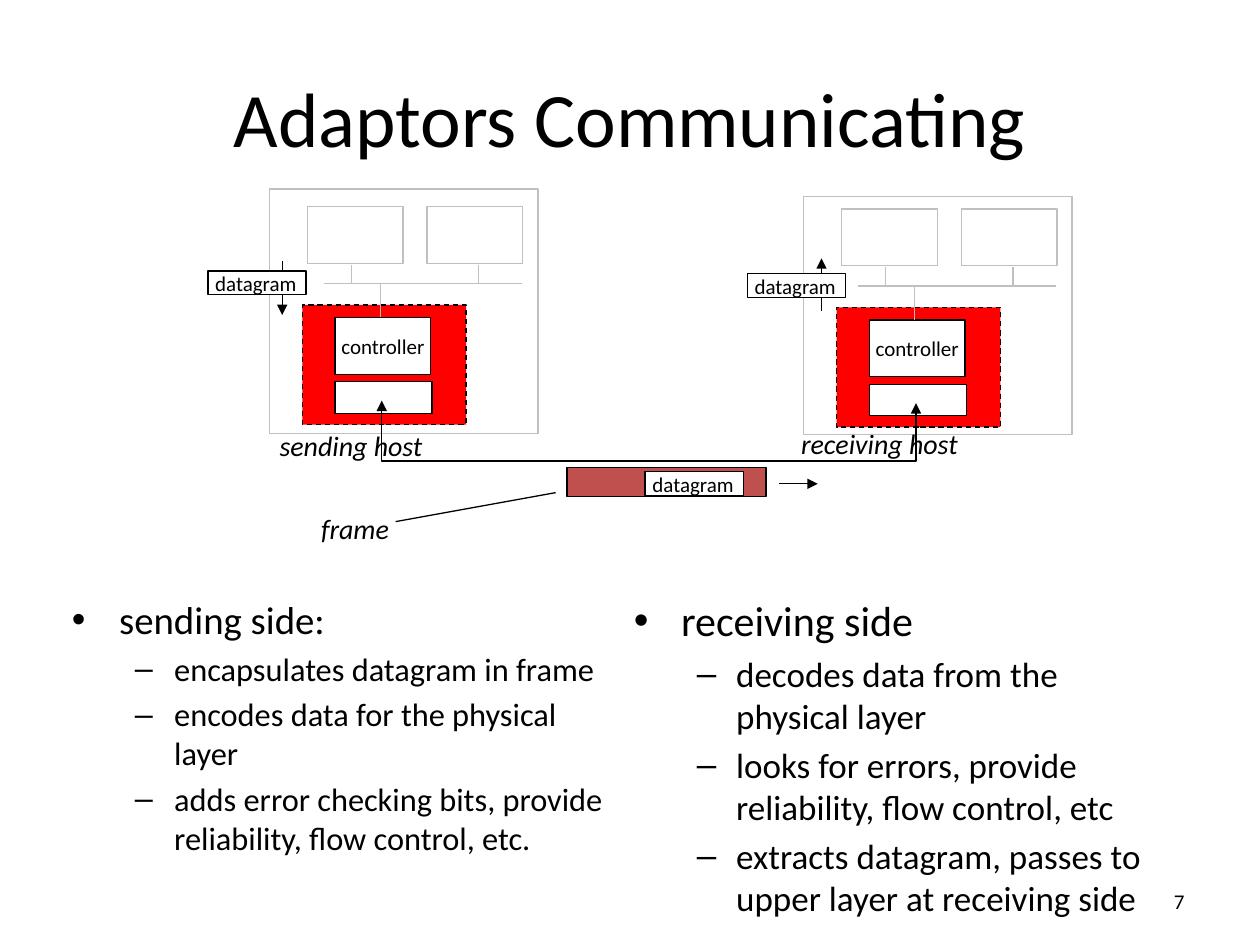
from lxml import etree
from pptx import Presentation
from pptx.dml.color import RGBColor
from pptx.enum.dml import MSO_LINE
from pptx.enum.shapes import MSO_CONNECTOR, MSO_SHAPE
from pptx.enum.text import MSO_ANCHOR, MSO_AUTO_SIZE, PP_ALIGN
from pptx.oxml.ns import qn
from pptx.util import Pt

PX = 9144  # 100 px to the inch
FONT = "Calibri"
RECT, STRAIGHT, DASH = MSO_SHAPE.RECTANGLE, MSO_CONNECTOR.STRAIGHT, MSO_LINE.DASH
CENTER, RIGHT = PP_ALIGN.CENTER, PP_ALIGN.RIGHT
TOP, MIDDLE, NO_FIT = MSO_ANCHOR.TOP, MSO_ANCHOR.MIDDLE, MSO_AUTO_SIZE.NONE
COLORS = {name: RGBColor.from_string(value) for name, value in {
    "black": "000000", "white": "FFFFFF", "gray": "C0C0C0",
    "adaptor": "FF0000", "frame": "C0504D"}.items()}

deck = Presentation()
deck.slide_width, deck.slide_height = 1000 * PX, 750 * PX
page = deck.slides.add_slide(deck.slide_layouts[3])
shapes = page.shapes


def draw(kind, at, line="black", fill="white", arrow=False):
    """Add a rectangle (left, top, width, height) or a line (x1, y1, x2, y2)."""
    lengths = [value * PX for value in at]
    if kind == "box":
        item = shapes.add_shape(RECT, *lengths)
        item.shadow.inherit = False
        item.fill.solid()
        item.fill.fore_color.rgb = COLORS[fill]
    else:
        item = shapes.add_connector(STRAIGHT, *lengths)
    item.line.color.rgb = COLORS[line]
    item.line.width = Pt(0.75)
    if arrow:
        etree.SubElement(item.line._get_or_add_ln(), qn("a:tailEnd"), type="triangle")
    if kind == "line":
        etree.SubElement(item._element.spPr, qn("a:effectLst"))
    return item


def write(item, text, size, italic=False, align=None, anchor=TOP, wrap=False):
    """Put one formatted paragraph into a shape."""
    frame = item.text_frame
    frame.text = text
    frame.word_wrap, frame.vertical_anchor, frame.auto_size = wrap, anchor, NO_FIT
    para = frame.paragraphs[0]
    para.alignment = align
    font = para.runs[0].font
    font.name, font.size, font.italic = FONT, Pt(size), italic
    font.color.rgb = COLORS["black"]


# Title
title = shapes.title
title.left, title.top, title.width, title.height = [v * PX for v in (50, 30, 900, 125)]
write(title, "Adaptors Communicating", 44, align=CENTER, anchor=MIDDLE, wrap=True)

# Bullet lists
lists = [
    ((47, 468, 445, 255), 22.2, 18.5, [
        "sending side:",
        "encapsulates datagram in frame",
        "encodes data for the physical layer",
        "adds error checking bits, provide reliability, flow control, etc."]),
    ((493, 467, 447, 255), 24, 20, [
        "receiving side",
        "decodes data from the physical layer",
        "looks for errors, provide reliability, flow control, etc",
        "extracts datagram, passes to upper layer at receiving side"]),
]
for body, (at, head_size, item_size, lines) in zip(list(page.placeholders)[1:], lists):
    body.left, body.top, body.width, body.height = [v * PX for v in at]
    frame = body.text_frame
    frame.text = "\n".join(lines)
    frame.auto_size = NO_FIT
    for index, para in enumerate(frame.paragraphs):
        para.level = min(index, 1)
        font = para.runs[0].font
        font.name, font.size = FONT, Pt(item_size if index else head_size)
        font.color.rgb = COLORS["black"]

# Frame on the link
draw("box", (450, 371, 158, 23), fill="frame")

# Hosts: the receiving one repeats the sending one, shifted
hosts = [(0, 0, 150, 194, (224, 207, 224, 250)),
         (424, 2, 156, 189, (652, 247, 652, 205))]
for dx, dy, top, height, flow in hosts:
    draw("box", (214 + dx, top, 213, height), line="gray")
    draw("line", flow, arrow=True)
    adaptor = draw("box", (240 + dx, 242 + dy, 130, 95), fill="adaptor")
    adaptor.line.dash_style = DASH
    draw("box", (266 + dx, 303 + dy, 77, 25))
    controller = draw("box", (266 + dx, 252 + dy, 76, 45))
    write(controller, "controller", 12, align=CENTER, anchor=MIDDLE)
    # Bus with its stems and the two upper units
    bus = 225 + dy
    draw("line", (257 + dx, bus, 414 + dx, bus), line="gray")
    draw("line", (302 + dx, 252 + dy, 302 + dx, bus), line="gray")
    for unit, stem in ((244, 279), (339, 380)):
        draw("box", (unit + dx, 164 + dy, 76, 45), line="gray")
        draw("line", (stem + dx, bus, stem + dx, 210 + dy), line="gray")

# Link between the adaptors
builder = shapes.build_freeform(303, 318, scale=PX)
builder.add_line_segments([(303, 366), (727, 366), (727, 320)], close=False)
link = builder.convert_to_shape()
link.shadow.inherit = False
link.fill.background()
link.line.color.rgb = COLORS["black"]
link.line.width = Pt(0.75)
for end in ("a:headEnd", "a:tailEnd"):
    etree.SubElement(link.line._get_or_add_ln(), qn(end), type="triangle")

# Datagram labels
for left, top in ((165, 215), (593, 217), (512, 374)):
    draw("box", (left, top, 78, 19))
    label = shapes.add_textbox((left - 4) * PX, (top - 5) * PX, 86 * PX, 30 * PX)
    write(label, "datagram", 12)

# Captions
for text, at in (("sending host", (212, 335, 141, 37)),
                 ("receiving host", (626, 334, 152, 37)),
                 ("frame", (245, 401, 83, 37))):
    write(shapes.add_textbox(*[v * PX for v in at]), text, 16, italic=True)

# Direction of the frame and its pointer
draw("line", (618, 384, 649, 384), arrow=True)
draw("line", (314, 414, 441, 391))

# Page number
number = shapes.add_textbox(717 * PX, 695 * PX, 233 * PX, 40 * PX)
write(number, "7", 12, align=RIGHT, anchor=MIDDLE, wrap=True)

deck.save("out.pptx")
